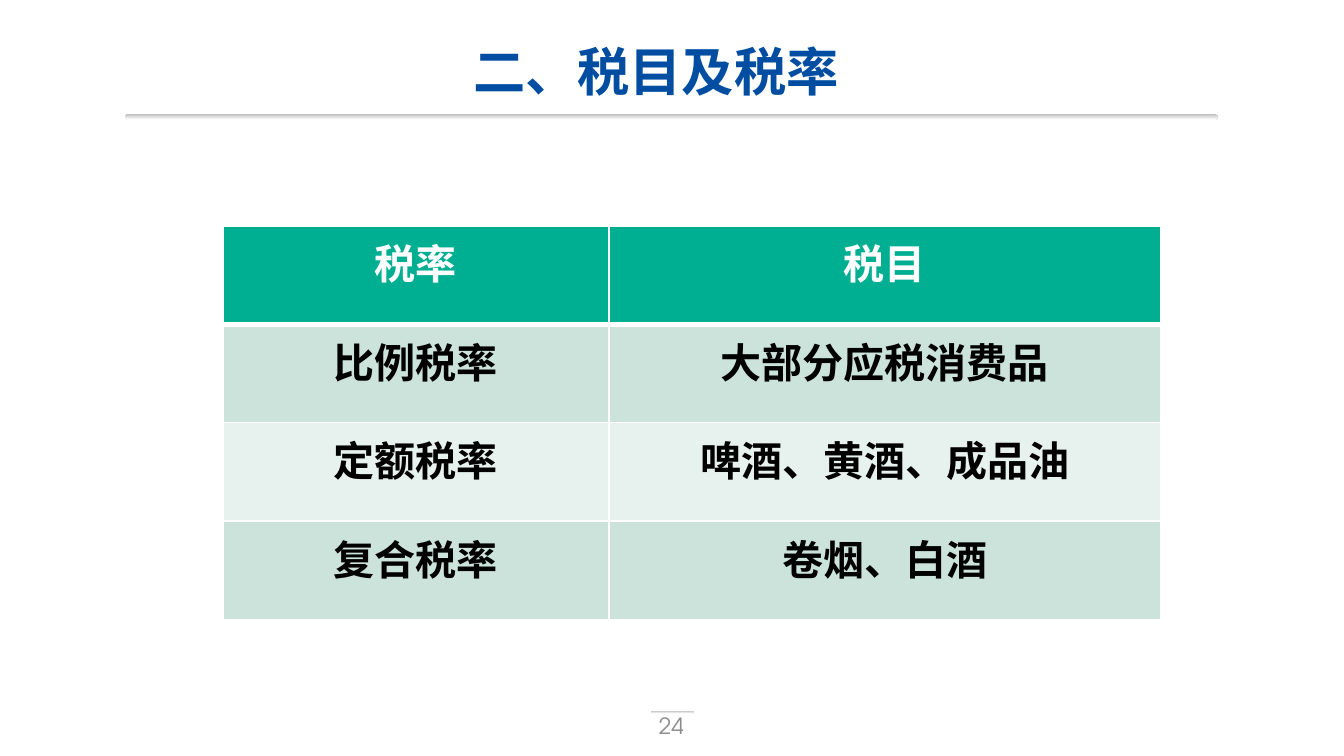
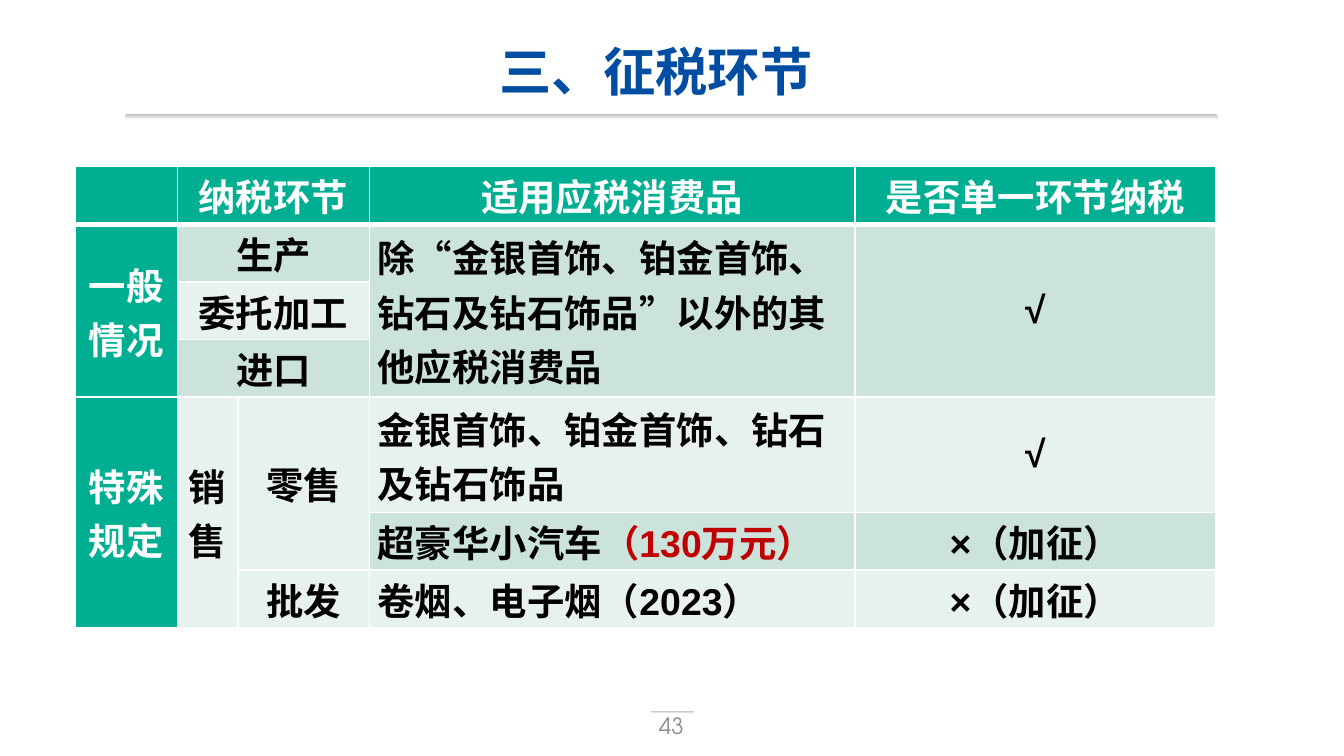
from pptx import Presentation
from pptx.dml.color import RGBColor
from pptx.enum import lang, shapes, text
from pptx.oxml import parse_xml
from pptx.oxml.ns import nsdecls
from pptx.util import Inches, Pt

BLUE = RGBColor(0x00, 0x4D, 0xA1)
GREEN = RGBColor(0x00, 0xAF, 0x92)
BANDS = RGBColor(0xE7, 0xF2, 0xEE), RGBColor(0xCC, 0xE3, 0xDC)
RED = RGBColor(0xC0, 0x00, 0x00)
GREY = RGBColor(0x8C, 0x8C, 0x8C)
RULE_GREY = RGBColor(0xBF, 0xBF, 0xBF)
BLACK = RGBColor(0, 0, 0)
WHITE = RGBColor(0xFF, 0xFF, 0xFF)

CJK_FONT = "Noto Sans CJK SC"
TABLE_FONT = "Arial"
NUMBER_FONT = "TeX Gyre Adventor"
RULES = [(0.93, 0.85, 8.13, 0.04), (4.84, 5.29, 0.32, 0.02)]

# A cell is a string, a list of (text, colour) runs, or None inside a merged area.
# A merge is (row, column, rows, columns). Row shares divide the table height.
SLIDES = [
    dict(
        title="二、税目及税率", number="24",
        at=(1.66, 1.68), cols=[2.87, 4.11], height=2.93,
        row_shares=[1, 1, 1, 1], size=22,
        cells=[
            ["税率", "税目"],
            ["比例税率", "大部分应税消费品"],
            ["定额税率", "啤酒、黄酒、成品油"],
            ["复合税率", "卷烟、白酒"],
        ],
        merges=[], left_cols=[], head_cols=[],
        insets=(0.1, 0.05), anchor=text.MSO_ANCHOR.TOP,
    ),
    dict(
        title="三、征税环节", number="43",
        at=(0.56, 1.24), cols=[0.76, 0.45, 0.98, 3.61, 2.69], height=3.43,
        row_shares=[1, 1, 1, 1, 2, 1, 1], size=20,
        cells=[
            [None, "纳税环节", None, "适用应税消费品", "是否单一环节纳税"],
            ["一般情况", "生产", None,
             "除“金银首饰、铂金首饰、钻石及钻石饰品”以外的其他应税消费品", "√"],
            [None, "委托加工", None, None, None],
            [None, "进口", None, None, None],
            ["特殊规定", "销售", "零售", "金银首饰、铂金首饰、钻石及钻石饰品", "√"],
            [None, None, None,
             [("超豪华小汽车", BLACK), ("（130万元）", RED)], "×（加征）"],
            [None, None, "批发", "卷烟、电子烟（2023）", "×（加征）"],
        ],
        merges=[(0, 1, 1, 2), (1, 0, 3, 1), (1, 1, 1, 2), (1, 3, 3, 1),
                (1, 4, 3, 1), (2, 1, 1, 2), (3, 1, 1, 2), (4, 0, 3, 1),
                (4, 1, 3, 1), (4, 2, 2, 1)],
        left_cols=[3], head_cols=[0],
        insets=(0.06, 0), anchor=text.MSO_ANCHOR.MIDDLE,
    ),
]


def add_run(p, words, font, size, color, bold=False):
    r = p.add_run()
    r.text = words
    r.font.name, r.font.size, r.font.bold = font, Pt(size), bold
    r.font.color.rgb = color
    r.font.language_id = lang.MSO_LANGUAGE_ID.SIMPLIFIED_CHINESE
    ea = parse_xml(f'<a:ea {nsdecls("a")} typeface="{CJK_FONT}"/>')
    r.font._element.find(".//{*}latin").addnext(ea)


def add_line_of_text(s, at, words, anchor, *style):
    sp = s.shapes.add_textbox(*map(Inches, at))
    tf = sp.text_frame
    tf.word_wrap = True
    tf.vertical_anchor = anchor
    tf.margin_left = tf.margin_right = Inches(0.07)
    tf.margin_top = tf.margin_bottom = Inches(0.04)
    p = tf.paragraphs[0]
    p.alignment = text.PP_ALIGN.CENTER
    add_run(p, words, *style)


def add_rule(s, at):
    """Thin bar fading from grey at the top to white."""
    sp = s.shapes.add_shape(shapes.MSO_SHAPE.ROUNDED_RECTANGLE, *map(Inches, at))
    sp.adjustments[0] = 0.5
    sp.shadow.inherit = False
    sp.line.fill.background()
    sp.fill.gradient()
    sp.fill.gradient_angle = 270
    for stop, color, position in zip(sp.fill.gradient_stops, (RULE_GREY, WHITE), (0, 1)):
        stop.color.rgb = color
        stop.position = position


def set_borders(cell, top, bottom):
    tc_pr = cell._tc.get_or_add_tcPr()
    widths = dict(lnL=1, lnR=1, lnT=top, lnB=bottom)
    for i, (side, width) in enumerate(widths.items()):
        tc_pr.insert(i, parse_xml(
            f'<a:{side} {nsdecls("a")} w="{Pt(width)}"><a:solidFill>'
            f'<a:srgbClr val="{WHITE}"/></a:solidFill></a:{side}>'))


def add_tax_table(s, d):
    shares = d["row_shares"]
    size = sum(d["cols"]), d["height"]
    table = s.shapes.add_table(len(shares), len(d["cols"]),
                               *map(Inches, d["at"] + size)).table
    table.first_row = table.horz_banding = False
    for col, width in zip(table.columns, d["cols"]):
        col.width = Inches(width)
    for row, share in zip(table.rows, shares):
        row.height = Inches(d["height"] * share / sum(shares))
    for i, values in enumerate(d["cells"]):
        for j, value in enumerate(values):
            cell = table.cell(i, j)
            is_head = i == 0 or j in d["head_cols"]
            cell.fill.solid()
            cell.fill.fore_color.rgb = GREEN if is_head else BANDS[i % 2]
            set_borders(cell, top=3 if i == 1 else 1, bottom=3 if i == 0 else 1)
            cell.vertical_anchor = d["anchor"]
            cell.margin_left = cell.margin_right = Inches(d["insets"][0])
            cell.margin_top = cell.margin_bottom = Inches(d["insets"][1])
            if value is None:
                continue
            p = cell.text_frame.paragraphs[0]
            is_left = i > 0 and j in d["left_cols"]
            p.alignment = text.PP_ALIGN.LEFT if is_left else text.PP_ALIGN.CENTER
            if isinstance(value, str):
                value = [(value, WHITE if is_head else BLACK)]
            for words, color in value:
                add_run(p, words, TABLE_FONT, d["size"], color, True)
    for i, j, down, across in d["merges"]:
        table.cell(i, j).merge(table.cell(i + down - 1, j + across - 1))


def main():
    prs = Presentation()
    prs.slide_width = Inches(10)
    prs.slide_height = prs.slide_width * 9 // 16
    for d in SLIDES:
        s = prs.slides.add_slide(prs.slide_layouts[6])
        for at in RULES:
            add_rule(s, at)
        add_line_of_text(s, (3.83, 5.25, 2.33, 0.3), d["number"],
                         text.MSO_ANCHOR.MIDDLE, NUMBER_FONT, 12, GREY)
        add_line_of_text(s, (0.9, 0.25, 7.96, 0.55), d["title"],
                         text.MSO_ANCHOR.TOP, CJK_FONT, 28, BLUE, True)
        add_tax_table(s, d)
    prs.save("out.pptx")


if __name__ == "__main__":
    main()
